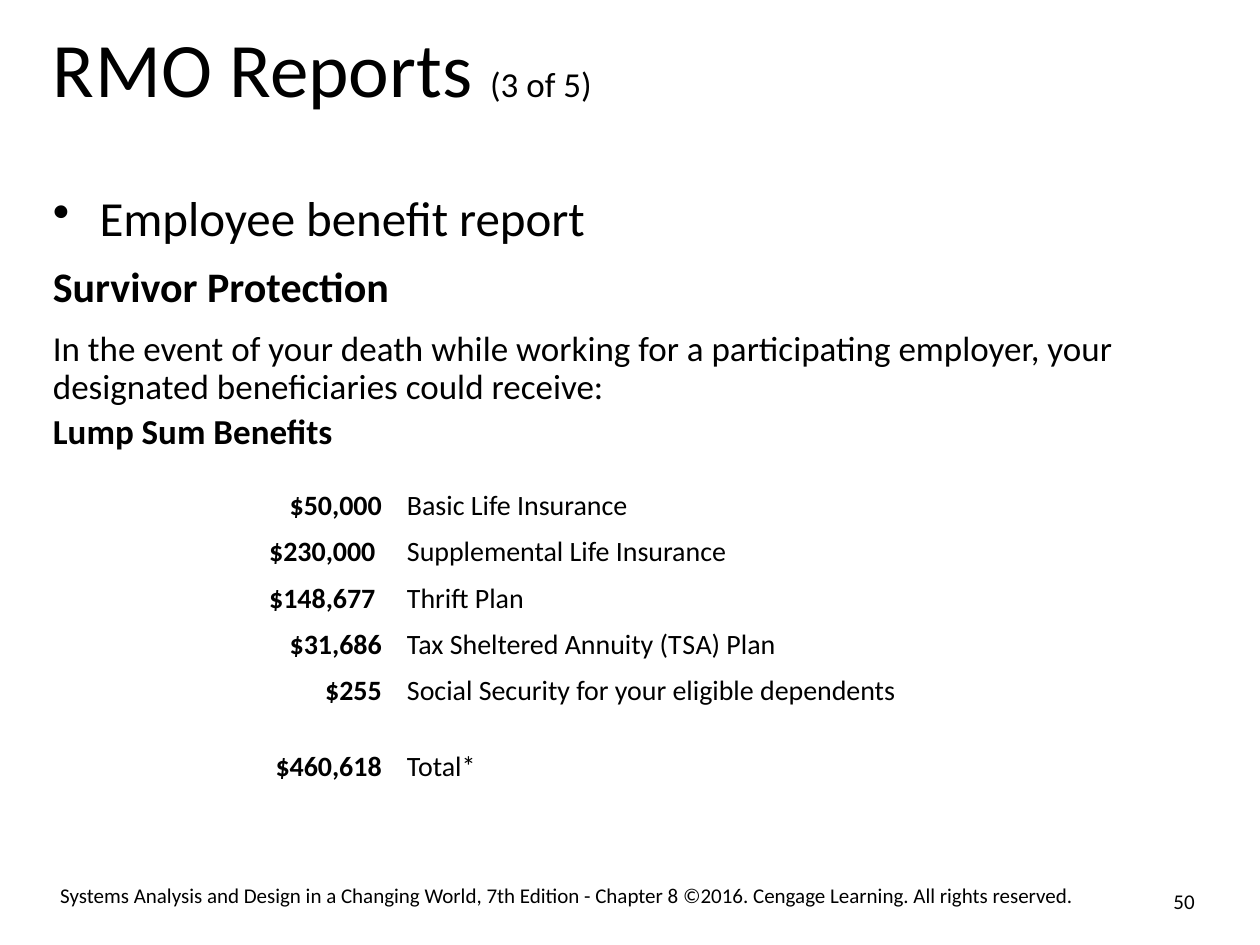
"""Build the RMO employee benefit report slide."""
import pptx
import pptx.dml.color
import pptx.enum.text
import pptx.util

Inches = pptx.util.Inches
Pt = pptx.util.Pt
ALIGN = pptx.enum.text.PP_ALIGN
ANCHOR = pptx.enum.text.MSO_ANCHOR
COLORS = {"text": "000000"}
FONT = "Calibri"
BENEFITS = [
    ("$50,000", "Basic Life Insurance", 0.35),
    ("$230,000 ", "Supplemental Life Insurance", 0.35),
    ("$148,677 ", "Thrift Plan", 0.35),
    ("$31,686", "Tax Sheltered Annuity (T| |S| |A) Plan", 0.35),
    ("$255", "Social Security for your eligible dependents", 0.6),
    ("$460,618", "Total*", 0.41),
]


def add_run(paragraph, text, size, bold=False):
    """Append one formatted run."""
    run = paragraph.add_run()
    run.text = text
    run.font.name = FONT
    run.font.size = Pt(size)
    run.font.bold = bold
    run.font.color.rgb = pptx.dml.color.RGBColor.from_string(COLORS["text"])


def add_spaced_runs(paragraph, text, size):
    """Append runs split at bars, setting lone spaces as hairline gaps."""
    for part in text.split("|"):
        add_run(paragraph, part, 1 if part == " " else size)


def add_text_box(slide, left, top, width, height, inset=0):
    """Add a wrapping text box and return its text frame."""
    box = slide.shapes.add_textbox(
        Inches(left), Inches(top), Inches(width), Inches(height))
    frame = box.text_frame
    frame.word_wrap = True
    frame.margin_left = frame.margin_right = Inches(inset)
    frame.margin_top = frame.margin_bottom = Inches(inset / 2)
    frame.paragraphs[0].line_spacing = 0.9
    return frame


def add_line(slide, top, height, text, size, bold=False):
    """Add a body text box with one paragraph and return its frame."""
    frame = add_text_box(slide, 0.42, top, 9.17, height)
    add_run(frame.paragraphs[0], text, size, bold)
    return frame


def add_bullet(paragraph, indent):
    """Give a paragraph a round bullet with a hanging indent."""
    properties = paragraph._p.get_or_add_pPr()
    properties.set("marL", str(Inches(indent)))
    properties.set("indent", str(-Inches(indent)))
    bullet = properties.makeelement(pptx.oxml.ns.qn("a:buChar"), {"char": "•"})
    properties.append(bullet)


def add_benefit_table(slide):
    """Add the plain table of amounts and benefit names."""
    table = slide.shapes.add_table(
        len(BENEFITS), 2, Inches(1.92), Inches(3.83),
        Inches(5.92), Inches(2.41)).table
    table.first_row = table.horz_banding = False
    for column, width in zip(table.columns, (1.21, 4.71)):
        column.width = Inches(width)
    for row, (amount, name, height) in zip(table.rows, BENEFITS):
        row.height = Inches(height)
        for cell in row.cells:
            cell.fill.background()
        amount_paragraph, name_paragraph = (
            cell.text_frame.paragraphs[0] for cell in row.cells)
        amount_paragraph.alignment = ALIGN.RIGHT
        add_run(amount_paragraph, amount, 16, True)
        add_spaced_runs(name_paragraph, name, 16)


def add_footer(slide):
    """Add the copyright line and the slide number."""
    footer = add_text_box(slide, 0.38, 6.98, 8.54, 0.27, 0.1)
    add_run(footer.paragraphs[0],
            "Systems Analysis and Design in a Changing World, 7th Edition - "
            "Chapter 8 ©2016. Cengage Learning. All rights reserved.", 12)
    number = add_text_box(slide, 8.85, 6.95, 0.73, 0.4, 0.1)
    number.vertical_anchor = ANCHOR.MIDDLE
    number.paragraphs[0].line_spacing = 1.0
    number.paragraphs[0].alignment = ALIGN.RIGHT
    add_run(number.paragraphs[0], "50", 12)


def main():
    """Build and save the slide."""
    presentation = pptx.Presentation()
    presentation.slide_width = Inches(10)
    presentation.slide_height = Inches(7.5)
    slide = presentation.slides.add_slide(presentation.slide_layouts[6])
    add_footer(slide)
    title = add_text_box(slide, 0.42, 0.25, 9.17, 0.67).paragraphs[0]
    add_spaced_runs(title, "R| |M| |O Reports ", 44)
    add_run(title, "(3 of 5)", 20)
    heading = add_line(slide, 1.54, 0.46, "Employee benefit report", 28)
    add_bullet(heading.paragraphs[0], 0.37)
    add_line(slide, 2.11, 0.41, "Survivor Protection", 24, True)
    body = add_line(
        slide, 2.63, 0.98,
        "In the event of your death while working for a participating "
        "employer, your designated beneficiaries could receive:", 20)
    subheading = body.add_paragraph()
    subheading.line_spacing = 0.9
    subheading.space_before = Pt(4)
    add_run(subheading, "Lump Sum Benefits", 20, True)
    add_benefit_table(slide)
    presentation.save("out.pptx")


if __name__ == "__main__":
    main()
